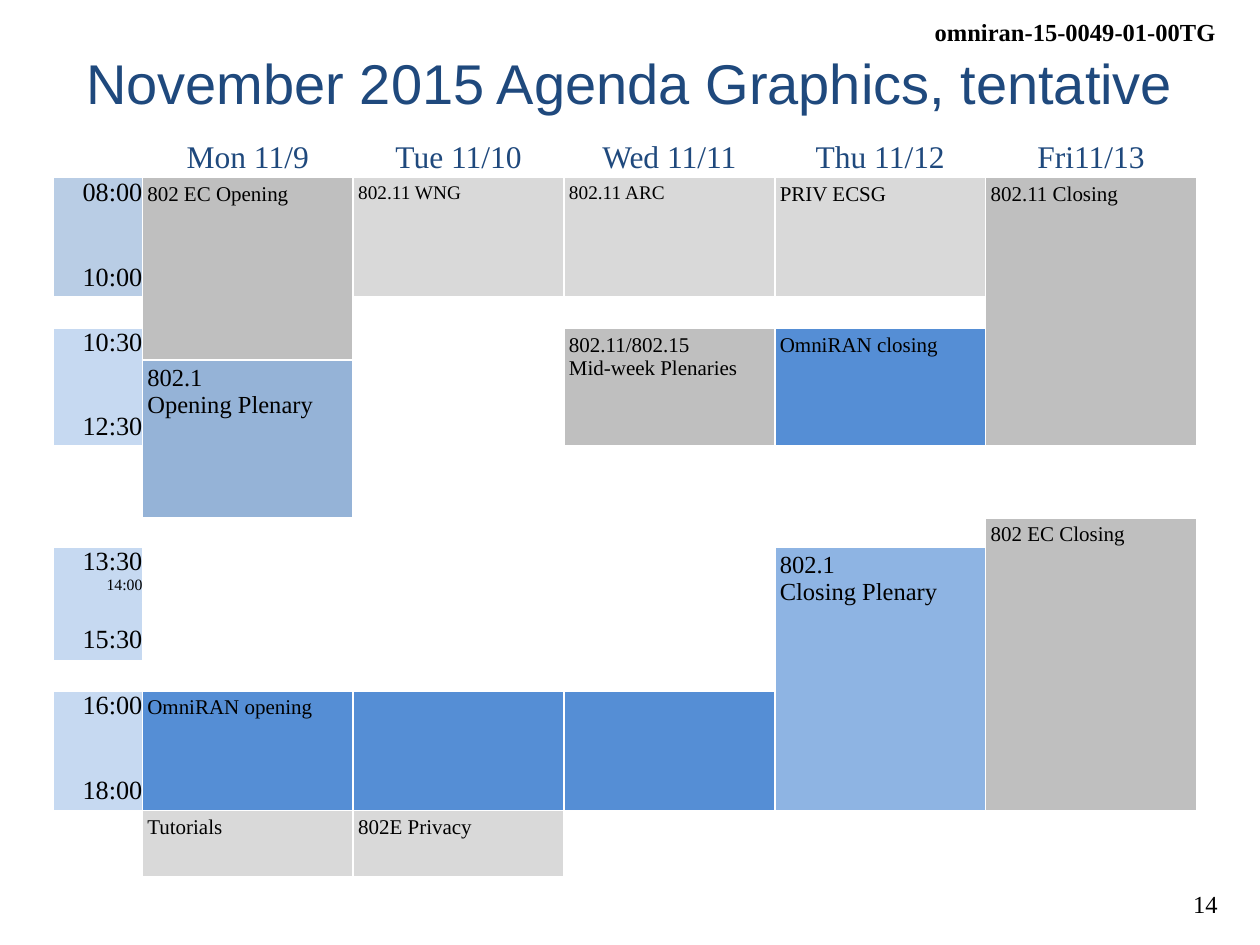
from pptx import Presentation
from pptx.dml.color import RGBColor
from pptx.enum.text import MSO_ANCHOR, PP_ALIGN
from pptx.oxml.ns import qn
from pptx.util import Cm, Pt
from lxml.etree import SubElement

SERIF = "Times New Roman"
NAVY, BLACK, WHITE = "1F497D", "000000", "FFFFFF"
DARK, LIGHT, BLUE, PALE = "BFBFBF", "D9D9D9", "558ED5", "C6D9F1"

DAYS = ["Mon 11/9", "Tue 11/10", "Wed 11/11", "Thu 11/12", "Fri11/13"]
COLS = [1.8] + [4.25] * 5
ROWS = [0.74, 2.4, 0.64, 0.63, 1.71, 1.45, 0.59, 1.12, 1.12, 0.62, 2.4, 0.67, 0.67]

# Time slots: row, rows spanned, fill, (text, size, space before)
TIMES = [
    (1, 1, "B9CDE5", [("08:00", 15, 0), ("10:00", 15, 32)]),
    (3, 2, PALE, [("10:30", 15, 0), ("12:30", 15, 31)]),
    (7, 2, PALE, [("13:30", 15, 0), ("14:00", 9, 0), ("15:30", 15, 18)]),
    (10, 1, PALE, [("16:00", 15, 0), ("18:00", 15, 32)]),
]

# Sessions: row, column, rows spanned, fill, text, size
EVENTS = [
    (1, 1, 3, DARK, "802 EC Opening", 12),
    (1, 2, 1, LIGHT, "802.11 WNG", 11),
    (1, 3, 1, LIGHT, "802.11 ARC", 11),
    (1, 4, 1, LIGHT, "PRIV ECSG", 12),
    (1, 5, 4, DARK, "802.11 Closing", 12),
    (3, 3, 2, DARK, "802.11/802.15 \vMid-week Plenaries", 12),
    (3, 4, 2, BLUE, "OmniRAN closing", 12),
    (4, 1, 2, "95B3D7", "802.1\vOpening Plenary", 14),
    (6, 5, 5, DARK, "802 EC Closing", 12),
    (7, 4, 4, "8EB4E3", "802.1\vClosing Plenary", 14),
    (10, 1, 1, BLUE, "OmniRAN opening", 12),
    (10, 2, 1, BLUE, "", 12),
    (10, 3, 1, BLUE, "", 12),
    (11, 1, 2, LIGHT, "Tutorials", 12),
    (11, 2, 2, LIGHT, "802E Privacy", 12),
]

# Free slots over two rows: row, column
FREE = [(3, 2), (5, 0), (5, 2), (5, 3), (5, 4), (6, 1), (7, 2), (7, 3),
        (11, 0), (11, 3), (11, 4)]


def color(code):
    return RGBColor.from_string(code)


def style(para, size, code=BLACK, align=PP_ALIGN.LEFT, face=SERIF, bold=False):
    para.alignment = align
    for run in para.runs:
        font = run.font
        font.name, font.size, font.bold = face, Pt(size), bold
        font.color.rgb = color(code)


def label(slide, box, text, size, wrap=False, inset=(0.25, 0.13), **look):
    frame = slide.shapes.add_textbox(*map(Cm, box)).text_frame
    frame.word_wrap = wrap
    frame.vertical_anchor = MSO_ANCHOR.MIDDLE
    frame.margin_left = frame.margin_right = Cm(inset[0])
    frame.margin_top = frame.margin_bottom = Cm(inset[1])
    frame.text = text
    style(frame.paragraphs[0], size, **look)


def pad(cell, gap):
    cell.margin_left = cell.margin_right = Cm(gap)
    cell.margin_top = cell.margin_bottom = Cm(gap)


def paint(cell, code):
    cell.fill.solid()
    cell.fill.fore_color.rgb = color(code)


def span(grid, row, col, count):
    cell = grid.cell(row, col)
    if count > 1:
        cell.merge(grid.cell(row + count - 1, col))
    return cell


def agenda(slide, left, top):
    box = map(Cm, (left, top, sum(COLS), sum(ROWS)))
    grid = slide.shapes.add_table(len(ROWS), len(COLS), *box).table
    grid.horz_banding = False
    for col, width in zip(grid.columns, COLS):
        col.width = Cm(width)
    for row, height in zip(grid.rows, ROWS):
        row.height = Cm(height)

    # Blank cells: a tiny text size lets thin rows keep their height
    for cell in grid.iter_cells():
        pad(cell, 0)
        paint(cell, WHITE)
        para = cell.text_frame.paragraphs[0]
        SubElement(para._p, qn("a:endParaRPr"), sz="100")
    for row, col in FREE:
        span(grid, row, col, 2)

    # Day headings
    for col, day in enumerate(DAYS, 1):
        cell = grid.cell(0, col)
        cell.text_frame.text = day
        style(cell.text_frame.paragraphs[0], 18, NAVY, PP_ALIGN.CENTER)

    # Time column
    for row, count, fill, lines in TIMES:
        cell = span(grid, row, 0, count)
        paint(cell, fill)
        cell.text_frame.text = "\n".join(text for text, _, _ in lines)
        for para, (_, size, gap) in zip(cell.text_frame.paragraphs, lines):
            style(para, size, align=PP_ALIGN.RIGHT)
            para.space_before = Pt(gap)

    # Sessions
    for row, col, count, fill, text, size in EVENTS:
        cell = span(grid, row, col, count)
        paint(cell, fill)
        if text:
            pad(cell, 0.1)
            cell.text_frame.text = text
            style(cell.text_frame.paragraphs[0], size)


def main():
    deck = Presentation()
    deck.slide_width, deck.slide_height = Cm(25.4), Cm(19.05)
    slide = deck.slides.add_slide(deck.slide_layouts[6])

    # Document number, page number and title
    label(slide, (18.54, 0.2, 6.22, 0.86), "omniran-15-0049-01-00TG", 14,
          inset=(0.25, 0.1), align=PP_ALIGN.RIGHT, bold=True)
    label(slide, (23.7, 17.78, 1.1, 0.86), "14", 14,
          inset=(0.25, 0.1), align=PP_ALIGN.RIGHT)
    label(slide, (1.27, 0.66, 22.86, 1.98),
          "November 2015 Agenda Graphics, tentative", 32, wrap=True,
          code=NAVY, align=PP_ALIGN.CENTER, face="Arial")

    agenda(slide, 1.07, 2.82)
    deck.save("out.pptx")


if __name__ == "__main__":
    main()
